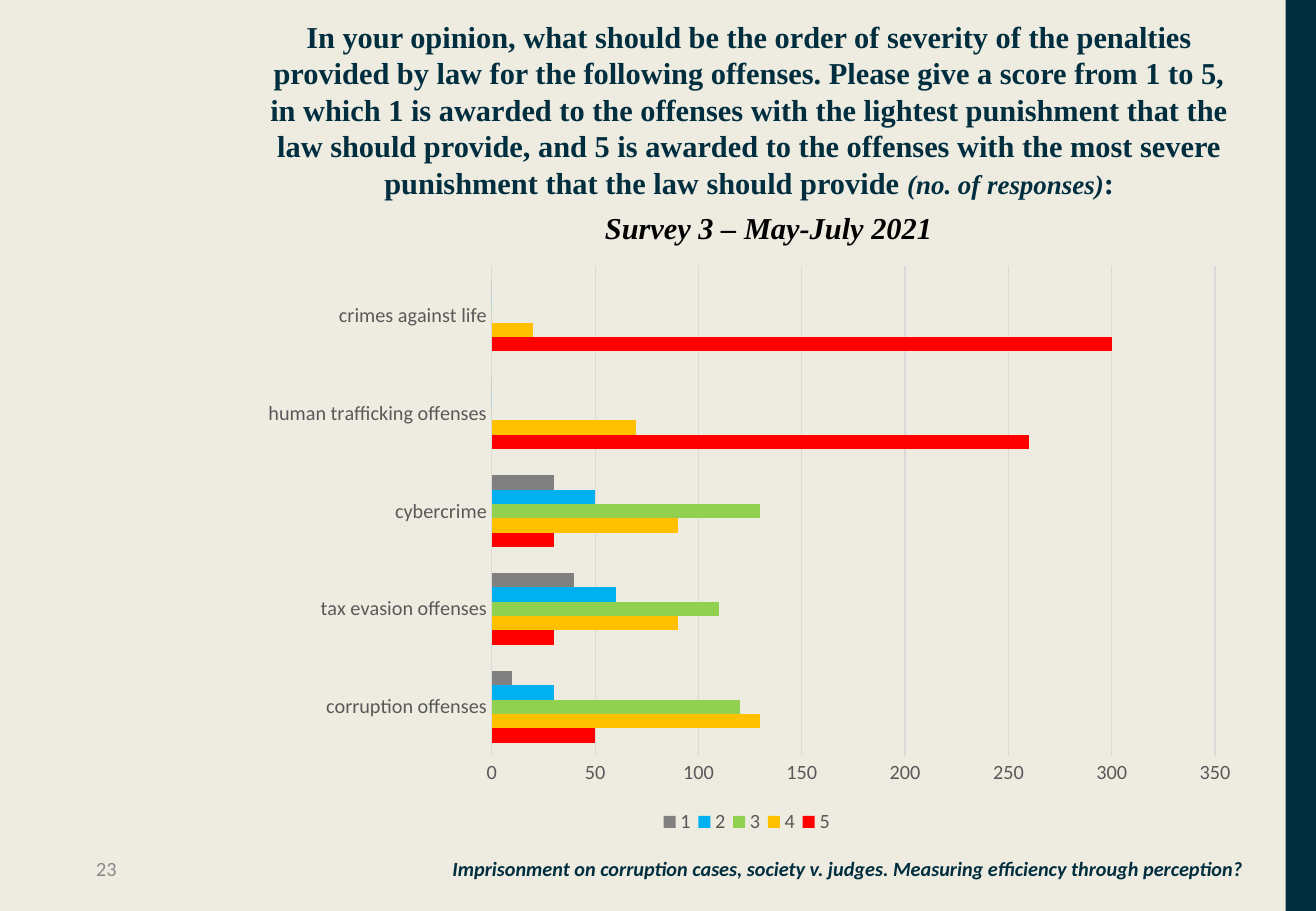
"""Build the survey slide on the severity of penalties by offense."""
from lxml import etree
from pptx import Presentation
from pptx import util as u
from pptx.chart import data as chart_data
from pptx.dml.color import RGBColor
from pptx.enum import chart as ch, shapes, text
from pptx.oxml import ns

CREAM, NAVY, GRAY, GRID, BLACK = "EEECE1", "002E3F", "595959", "D9D9D9", "000000"
SERIF, SANS = "Times New Roman", "Calibri"
ALIGN = text.PP_ALIGN

PANELS = [((0, 0, 10.83, 7.5), CREAM), ((10.58, 0, 0.25, 7.5), NAVY)]

QUESTION = (
    "In your opinion, what should be the order of severity of the penalties "
    "provided by law for the following offenses. Please give a score from 1 to 5, "
    "in which 1 is awarded to the offenses with the lightest punishment that the "
    "law should provide, and 5 is awarded to the offenses with the most severe "
    "punishment that the law should provide "
)
FOOTER = ("Imprisonment on corruption cases, society v. judges. "
          "Measuring efficiency through perception?")

# place, alignment, font, color, runs of (words, size, bold, italic)
TEXTS = [
    ((2.02, 0.15, 8.29, 1.5), ALIGN.CENTER, SERIF, NAVY,
     [(QUESTION, 18, True, False), ("(no. of responses)", 16, True, True),
      (":", 18, True, False)]),
    ((4, 1.67, 4.65, 0.4), ALIGN.CENTER, SERIF, BLACK,
     [("Survey 3 – May-July 2021", 18, True, True)]),
    ((0, 6.95, 1.75, 0.4), ALIGN.CENTER, SANS, "898989",
     [("23", 12, False, False)]),
    ((2, 6.95, 8.33, 0.4), ALIGN.RIGHT, SANS, NAVY,
     [(FOOTER, 12, True, True)]),
]

CHART_PLACE = (2, 2.04, 8.29, 4.95)
PLOT_AREA = {"layoutTarget": "inner", "xMode": "edge", "yMode": "edge",
             "x": 0.247, "y": 0.031, "w": 0.718, "h": 0.814}
LEGEND_AREA = {"xMode": "edge", "yMode": "edge",
               "x": 0.41, "y": 0.93, "w": 0.18, "h": 0.05}
OFFENSES = ["corruption offenses", "tax evasion offenses", "cybercrime",
            "human trafficking offenses", "crimes against life"]
SCORES = [
    ("5", "FF0000", (50, 30, 30, 260, 300)),
    ("4", "FFC000", (130, 90, 90, 70, 20)),
    ("3", "92D050", (120, 110, 130, 0, 0)),
    ("2", "00B0F0", (30, 60, 50, 0, 0)),
    ("1", "808080", (10, 40, 30, 0, 0)),
]


def inches(place):
    return [u.Inches(length) for length in place]


def paint(target, color):
    if hasattr(target, "solid"):
        target.solid()
        target.fore_color.rgb = RGBColor.from_string(color)
    else:
        target.color.rgb = RGBColor.from_string(color)


def set_font(font, name, size, color):
    font.name = name
    font.size = u.Pt(size)
    paint(font, color)


def add_panel(page, place, color):
    panel = page.shapes.add_shape(shapes.MSO_SHAPE.RECTANGLE, *inches(place))
    panel.shadow.inherit = False
    paint(panel.fill, color)
    panel.line.fill.background()


def add_text(page, place, align, font_name, color, runs):
    frame = page.shapes.add_textbox(*inches(place)).text_frame
    frame.word_wrap = True
    frame.vertical_anchor = text.MSO_ANCHOR.MIDDLE
    para = frame.paragraphs[0]
    para.alignment = align
    for words, size, bold, italic in runs:
        span = para.add_run()
        span.text = words
        set_font(span.font, font_name, size, color)
        span.font.bold = bold
        span.font.italic = italic


def set_layout(part, position, settings):
    for old in part.findall(ns.qn("c:layout")):
        part.remove(old)
    layout = etree.Element(ns.qn("c:layout"))
    manual = etree.SubElement(layout, ns.qn("c:manualLayout"))
    for tag, value in settings.items():
        etree.SubElement(manual, ns.qn("c:" + tag)).set("val", str(value))
    part.insert(position, layout)


def add_score_chart(page):
    scores = chart_data.CategoryChartData()
    scores.categories = OFFENSES
    for name, _, values in SCORES:
        scores.add_series(name, values)
    chart = page.shapes.add_chart(
        ch.XL_CHART_TYPE.BAR_CLUSTERED, *inches(CHART_PLACE), scores).chart
    set_font(chart.font, SANS, 10, BLACK)
    chart.has_title = False
    chart.has_legend = True
    chart.legend.position = ch.XL_LEGEND_POSITION.BOTTOM
    chart.legend.include_in_layout = False
    set_font(chart.legend.font, SANS, 12, GRAY)

    plot = chart.plots[0]
    plot.gap_width = 182
    plot.vary_by_categories = False
    for series, (_, color, _) in zip(plot.series, SCORES):
        paint(series.format.fill, color)
        series.invert_if_negative = False

    for axis in (chart.category_axis, chart.value_axis):
        axis.major_tick_mark = axis.minor_tick_mark = ch.XL_TICK_MARK.NONE
        set_font(axis.tick_labels.font, SANS, 12, GRAY)
    chart.value_axis.minimum_scale = 0
    chart.value_axis.maximum_scale = 350
    chart.value_axis.major_unit = 50
    chart.value_axis.has_major_gridlines = True
    chart.value_axis.format.line.fill.background()
    for line in (chart.category_axis.format.line,
                 chart.value_axis.major_gridlines.format.line):
        paint(line, GRID)
        line.width = u.Pt(0.75)
    chart_root = chart._chartSpace.chart
    set_layout(chart_root.plotArea, 0, PLOT_AREA)
    set_layout(chart_root.find(ns.qn("c:legend")), 1, LEGEND_AREA)


def main():
    deck = Presentation()
    deck.slide_width, deck.slide_height = inches((10.83, 7.5))
    page = deck.slides.add_slide(deck.slide_layouts[6])
    for panel in PANELS:
        add_panel(page, *panel)
    add_score_chart(page)
    for item in TEXTS:
        add_text(page, *item)
    deck.save("out.pptx")


if __name__ == "__main__":
    main()
